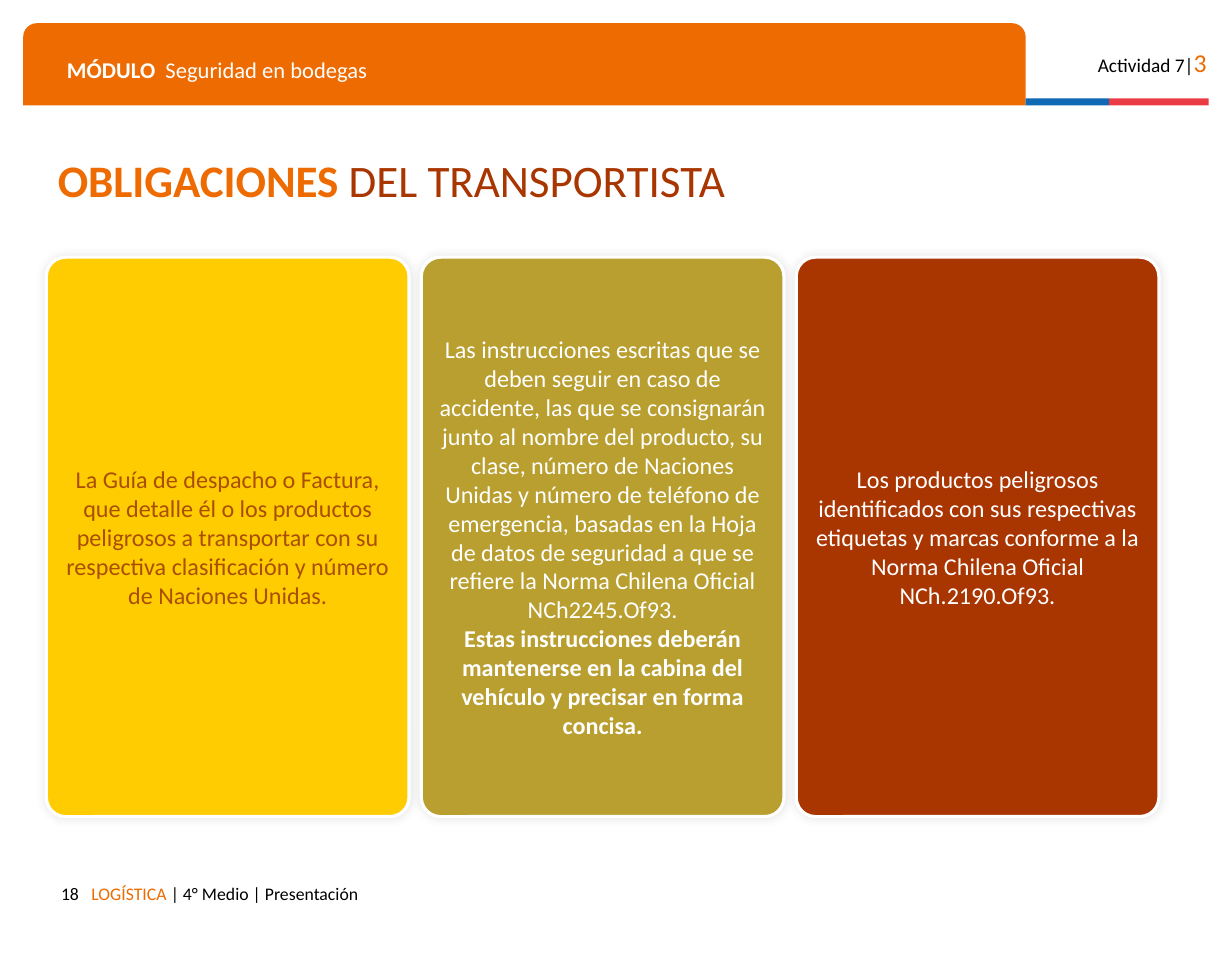
from lxml import etree
from pptx import Presentation
from pptx import util as u
from pptx.dml.color import RGBColor
from pptx.enum import shapes, text
from pptx.oxml import ns

ORANGE, RUST, WHITE, BLACK = "ED6B00", "A93501", "FFFFFF", "000000"
KIND = shapes.MSO_SHAPE
LEFT, MID, RIGHT = text.PP_ALIGN.LEFT, text.PP_ALIGN.CENTER, text.PP_ALIGN.RIGHT


def rgb(code):
    return RGBColor.from_string(code)


def sub(node, tag, **attrs):
    return etree.SubElement(node, ns.qn(tag), **attrs)


class Page:
    font = "Calibri"

    def __init__(self, slide):
        self.slide = slide

    def block(self, kind, box, fill, adjust=()):
        item = self.slide.shapes.add_shape(kind, *map(u.Inches, box))
        item.shadow.inherit = False
        item.fill.solid()
        item.fill.fore_color.rgb = rgb(fill)
        item.line.fill.background()
        for i, value in enumerate(adjust):
            item.adjustments[i] = value
        return item

    def typeset(self, para, runs, size, color, align=LEFT, bold=False, tab=None):
        """Fill a paragraph; each run is (words, changes to its font)."""
        para.alignment = align
        if tab:
            tabs = sub(para._p.get_or_add_pPr(), "a:tabLst")
            sub(tabs, "a:tab", pos=str(u.Inches(tab)), algn="l")
        font = para.font
        font.name, font.size, font.bold = self.font, u.Pt(size), bold
        font.color.rgb = rgb(color)
        for words, look in runs:
            run = para.add_run()
            run.text = words
            if "size" in look:
                run.font.size = u.Pt(look["size"])
            if "color" in look:
                run.font.color.rgb = rgb(look["color"])
            if "bold" in look:
                run.font.bold = look["bold"]

    def label(self, box, runs, size, color, **style):
        frame = self.slide.shapes.add_textbox(*map(u.Inches, box)).text_frame
        frame.word_wrap = True
        frame.margin_left = frame.margin_right = u.Inches(0.1)
        frame.margin_top = frame.margin_bottom = u.Inches(0.1)
        self.typeset(frame.paragraphs[0], runs, size, color, **style)
        return frame

    def card(self, box, fill, color, parts):
        """Draw a rounded card; each part is (words, bold)."""
        item = self.block(KIND.ROUNDED_RECTANGLE, box, fill, [0.053])
        item.line.color.rgb = rgb(WHITE)
        item.line.width = u.Pt(2)
        self.glow(item)
        frame = item.text_frame
        frame.word_wrap = True
        frame.vertical_anchor = text.MSO_ANCHOR.MIDDLE
        for i, (words, bold) in enumerate(parts):
            para = frame.add_paragraph() if i else frame.paragraphs[0]
            self.typeset(para, [(words, {})], 15, color, align=MID, bold=bold)

    def glow(self, item):
        """Give a shape a soft, even shadow."""
        effects = item._element.spPr.find(ns.qn("a:effectLst"))
        shade = sub(effects, "a:outerShdw", blurRad=str(u.Pt(6)), dist="0",
                    dir="0", algn="ctr", rotWithShape="0")
        tint = sub(shade, "a:srgbClr", val=BLACK)
        sub(tint, "a:alpha", val="11000")


CARDS = [
    ("FECC00", "AA4E02", [
        ("La Guía de despacho o Factura, que detalle él o los productos "
         "peligrosos a transportar con su respectiva clasificación y número "
         "de Naciones Unidas.", False)]),
    ("B99F2F", WHITE, [
        ("Las instrucciones escritas que se deben seguir en caso de accidente, "
         "las que se consignarán junto al nombre del producto, su clase, "
         "número de Naciones Unidas y número de teléfono de emergencia, "
         "basadas en la Hoja de datos de seguridad a que se refiere la Norma "
         "Chilena Oficial NCh2245.Of93.", False),
        ("Estas instrucciones deberán mantenerse en la cabina del vehículo y "
         "precisar en forma concisa.", True)]),
    (RUST, WHITE, [
        ("Los productos peligrosos identificados con sus respectivas etiquetas "
         "y marcas conforme a la Norma Chilena Oficial NCh.2190.Of93.", False)]),
]


def main():
    deck = Presentation()
    deck.slide_width, deck.slide_height = u.Inches(10.63), u.Inches(8.27)
    page = Page(deck.slides.add_slide(deck.slide_layouts[6]))

    page.block(KIND.ROUND_2_SAME_RECTANGLE, (0.2, 0.2, 8.65, 0.71), ORANGE,
               [0.167, 0])
    page.block(KIND.RECTANGLE, (8.85, 0.85, 0.72, 0.06), "0F69B4")
    page.block(KIND.RECTANGLE, (9.57, 0.85, 0.86, 0.06), "EB3C46")

    page.label((0.48, 0.38, 8.14, 0.35),
               [("MÓDULO", {"bold": True}), ("\tSeguridad en bodegas", {})],
               14, WHITE, tab=0.85)
    page.label((9.23, 0.3, 1.28, 0.38),
               [("Actividad 7|", {}), ("3", {"size": 16, "color": ORANGE})],
               12, BLACK, align=RIGHT)
    page.label((0.2, 7.53, 0.58, 0.29), [("18", {})], 11, BLACK, align=RIGHT)
    page.label((0.69, 7.53, 7.14, 0.38),
               [("LOGÍSTICA ", {"color": ORANGE}),
                ("| 4° Medio | Presentación", {})], 11, BLACK)

    title = page.label((0.4, 1.42, 7.09, 0.35),
                       [("OBLIGACIONES ", {"color": ORANGE, "bold": True}),
                        ("DEL TRANSPORTISTA", {})], 28, RUST)
    title.vertical_anchor = text.MSO_ANCHOR.MIDDLE
    title.paragraphs[0].line_spacing = 0.8

    for i, (fill, color, parts) in enumerate(CARDS):
        page.card((0.4 + 3.235 * i, 2.22, 3.13, 4.83), fill, color, parts)

    deck.save("out.pptx")


if __name__ == "__main__":
    main()
